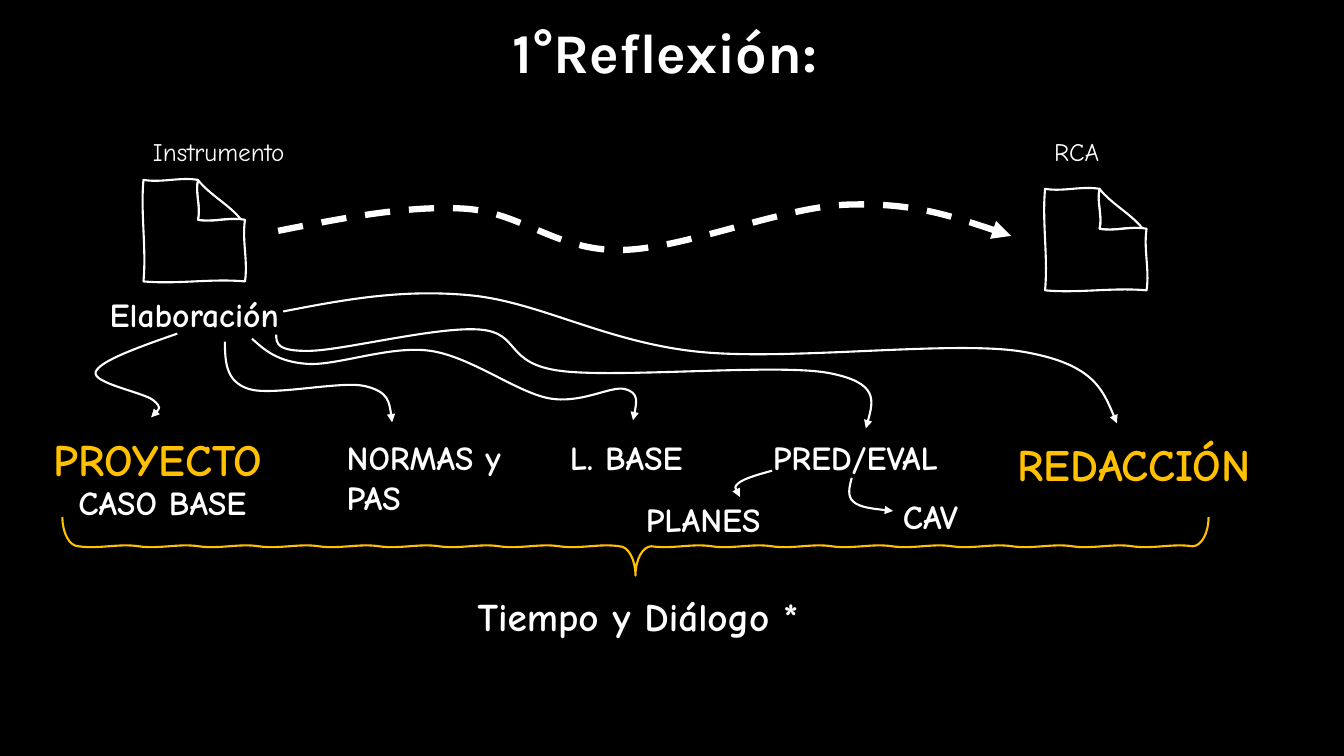
from dataclasses import dataclass
from itertools import pairwise
from typing import NamedTuple

from lxml import etree
from pptx import Presentation
from pptx import util as u
from pptx.dml.color import RGBColor
from pptx.enum import dml, text
from pptx.oxml.ns import qn


@dataclass(frozen=True)
class Theme:
    black: RGBColor = RGBColor(0x00, 0x00, 0x00)
    white: RGBColor = RGBColor(0xFF, 0xFF, 0xFF)
    gold: RGBColor = RGBColor(0xFF, 0xC0, 0x00)
    title_font: str = "Karla"
    body_font: str = "Comic Neue"
    title_size: float = 40
    key_size: float = 32
    closing_size: float = 28
    step_size: float = 24
    caption_size: float = 18
    thin: float = 1.5
    thick: float = 4.5


THEME = Theme()


class Point(NamedTuple):
    x: float
    y: float


class Curve(NamedTuple):
    """A Bézier piece: it leaves start toward leave and reaches end from arrive."""
    start: Point
    leave: Point
    arrive: Point
    end: Point


@dataclass(frozen=True)
class Label:
    words: str
    left: float
    top: float
    width: float
    height: float
    size: float = THEME.step_size
    color: RGBColor = THEME.white
    bold: bool = True
    font: str = THEME.body_font
    align: text.PP_ALIGN = text.PP_ALIGN.LEFT
    filled: bool = False


@dataclass(frozen=True)
class Arrow:
    knots: list[tuple[float, float]]
    weight: float = THEME.thin
    dashed: bool = False


STEP_TOP = 308.2
LABELS = [
    Label("1°Reflexión:", 0, 9, 950, 64, THEME.title_size, font=THEME.title_font,
          align=text.PP_ALIGN.CENTER),
    Label("Instrumento", 102.2, 93.6, 112, 29, THEME.caption_size, bold=False),
    Label("RCA", 745.9, 93.6, 54, 29, THEME.caption_size, bold=False),
    Label("Elaboración", 71.3, 206.6, 139, 36, filled=True),
    Label("PROYECTO", 31, 304.6, 187, 46, THEME.key_size, THEME.gold),
    Label("CASO BASE", 49, 340.6, 158, 36),
    Label("NORMAS y PAS", 240.5, STEP_TOP, 138.2, 65.5),
    Label("L. BASE", 400, STEP_TOP, 113, 36),
    Label("PRED/EVAL", 545, STEP_TOP, 153.4, 36),
    Label("PLANES", 454.3, 352.8, 110.2, 36),
    Label("CAV", 637.9, 350.6, 62, 36),
    Label("REDACCIÓN", 720, STEP_TOP, 201.6, 46, THEME.key_size, THEME.gold),
    Label("Tiempo y Diálogo *", 334.1, 419.8, 253.4, 41, THEME.closing_size, filled=True),
]

ARROWS = {
    "Instrumento a RCA": Arrow(
        [(198.7, 164.9), (331.2, 149), (442.8, 178.6), (604.8, 146.2), (722.2, 168.5)],
        THEME.thick, dashed=True),
    "Elaboración a PROYECTO": Arrow(
        [(126.7, 238.3), (68.4, 265.7), (109.4, 285.8), (108, 298.1)]),
    "Elaboración a NORMAS": Arrow(
        [(160.6, 244.1), (177.8, 277.9), (260.6, 275.8), (280.1, 301.7)]),
    "Elaboración a L. BASE": Arrow(
        [(180, 241.9), (219.6, 259.9), (307.4, 250.6), (391.7, 284.4), (446.4, 277.9),
         (452.2, 300.2)]),
    "Elaboración a PRED/EVAL": Arrow(
        [(197.3, 239), (221.8, 250.6), (342.7, 235.4), (401, 265), (591.8, 266.4),
         (618.5, 306)]),
    "Elaboración a REDACCIÓN": Arrow(
        [(202.3, 222.5), (336.2, 211), (499, 251.3), (730.8, 251.3), (797.8, 302.4)]),
    "PRED/EVAL a PLANES": Arrow([(551.5, 336.2), (527.8, 344.9), (528.5, 355)]),
    "PRED/EVAL a CAV": Arrow([(608.4, 341.3), (609.8, 358.6), (637.9, 365)]),
}

DOCUMENT_ORIGINS = [Point(102.5, 128.5), Point(746.5, 134.9)]
PAGE_SIDE, FOLD_X, FOLD_Y = 72.5, 38.9, 28.5
FOLD_CORNERS = [(FOLD_X, 0), (69.8, FOLD_Y), (FOLD_X, FOLD_Y)]
PAGE_CORNERS = [(0, 0), (FOLD_X, 0), (FOLD_X, FOLD_Y), (PAGE_SIDE, FOLD_Y),
                (PAGE_SIDE, PAGE_SIDE), (0, PAGE_SIDE)]

BRACE_LEFT, BRACE_RIGHT = 44.6, 863.3
BRACE_TOP, BRACE_BAR, BRACE_TIP = 369.4, 390.2, 411.1
BRACE_TURN = 11.5
BRACE_WAVES = 9


def between(a: Point, b: Point, share: float) -> Point:
    return Point(a.x + (b.x - a.x) * share, a.y + (b.y - a.y) * share)


def smooth(knots: list[Point]) -> list[Curve]:
    """Pass through all knots; each inner tangent runs parallel to its neighbours."""
    curves = []
    last = len(knots) - 2
    for i, (a, b) in enumerate(pairwise(knots)):
        before, after = knots[max(i - 1, 0)], knots[min(i + 2, last + 1)]
        leave = Point(a.x + (b.x - before.x) / 6, a.y + (b.y - before.y) / 6)
        arrive = Point(b.x - (after.x - a.x) / 6, b.y - (after.y - a.y) / 6)
        if i == 0:
            leave = between(a, arrive, 0.5)
        if i == last:
            arrive = between(leave, b, 0.5)
        curves.append(Curve(a, leave, arrive, b))
    return curves


def wobble(a: Point, b: Point, waves: int = 1, swing: float = 2.2) -> list[Curve]:
    """A hand-drawn edge from a to b that sways to both sides in each wave."""
    length = ((b.x - a.x) ** 2 + (b.y - a.y) ** 2) ** 0.5
    sway_x, sway_y = -(b.y - a.y) / length * swing, (b.x - a.x) / length * swing
    curves = []
    for wave in range(waves):
        start, first, second, end = (
            between(a, b, (wave + third / 3) / waves) for third in range(4))
        curves.append(Curve(start, Point(first.x + sway_x, first.y + sway_y),
                            Point(second.x - sway_x, second.y - sway_y), end))
    return curves


def quarter_turn(a: Point, b: Point, starts_upright: bool) -> Curve:
    corner = Point(a.x, b.y) if starts_upright else Point(b.x, a.y)
    return Curve(a, between(a, corner, 0.55), between(b, corner, 0.55), b)


def brace() -> list[Curve]:
    middle = (BRACE_LEFT + BRACE_RIGHT) / 2
    tip = Point(middle, BRACE_TIP)
    bar_start, notch_start, notch_end, bar_end = (
        Point(x, BRACE_BAR) for x in (BRACE_LEFT + BRACE_TURN, middle - BRACE_TURN,
                                      middle + BRACE_TURN, BRACE_RIGHT - BRACE_TURN))
    return [
        quarter_turn(Point(BRACE_LEFT, BRACE_TOP), bar_start, starts_upright=True),
        *wobble(bar_start, notch_start, BRACE_WAVES),
        quarter_turn(notch_start, tip, starts_upright=False),
        quarter_turn(tip, notch_end, starts_upright=True),
        *wobble(notch_end, bar_end, BRACE_WAVES),
        quarter_turn(bar_end, Point(BRACE_RIGHT, BRACE_TOP), starts_upright=False),
    ]


def draw_curves(shapes, curves: list[Curve], color: RGBColor = THEME.white,
                weight: float = THEME.thin, closed: bool = False):
    """Lay out the curve points as straight steps, then join each three into a Bézier."""
    builder = shapes.build_freeform(*map(u.Pt, curves[0].start))
    builder.add_line_segments(
        [tuple(map(u.Pt, point)) for curve in curves for point in curve[1:]], close=closed)
    outline = builder.convert_to_shape()
    steps = list(outline.element.iter(qn("a:lnTo")))
    for trio in zip(steps[::3], steps[1::3], steps[2::3]):
        bezier = etree.Element(qn("a:cubicBezTo"))
        trio[0].addprevious(bezier)
        for step in trio:
            bezier.append(step[0])
            step.getparent().remove(step)
    outline.shadow.inherit = False
    if closed:
        outline.fill.solid()
        outline.fill.fore_color.rgb = THEME.black
    else:
        outline.fill.background()
    outline.line.color.rgb = color
    outline.line.width = u.Pt(weight)
    return outline


def draw_arrow(shapes, arrow: Arrow) -> None:
    outline = draw_curves(shapes, smooth([Point(*knot) for knot in arrow.knots]),
                          weight=arrow.weight)
    if arrow.dashed:
        outline.line.dash_style = dml.MSO_LINE.DASH
    etree.SubElement(outline.element.spPr.find(qn("a:ln")), qn("a:tailEnd"), type="triangle")


def draw_document(shapes, origin: Point) -> None:
    document = shapes.add_group_shape()
    for corners in (FOLD_CORNERS, PAGE_CORNERS):
        placed = [Point(origin.x + x, origin.y + y) for x, y in corners]
        edges = [edge for a, b in pairwise(placed + placed[:1]) for edge in wobble(a, b)]
        draw_curves(document.shapes, edges, closed=True)


def draw_label(shapes, label: Label) -> None:
    box = shapes.add_textbox(*map(u.Pt, (label.left, label.top, label.width, label.height)))
    if label.filled:
        box.fill.solid()
        box.fill.fore_color.rgb = THEME.black
    box.text_frame.word_wrap = True
    paragraph = box.text_frame.paragraphs[0]
    paragraph.text = label.words
    paragraph.alignment = label.align
    font = paragraph.font
    font.name, font.size, font.bold = label.font, u.Pt(label.size), label.bold
    font.color.rgb = label.color


def main() -> None:
    deck = Presentation()
    deck.slide_width, deck.slide_height = u.Pt(960), u.Pt(540)
    slide = deck.slides.add_slide(deck.slide_layouts[6])
    slide.background.fill.solid()
    slide.background.fill.fore_color.rgb = THEME.black
    for label in LABELS:
        draw_label(slide.shapes, label)
    for origin in DOCUMENT_ORIGINS:
        draw_document(slide.shapes, origin)
    draw_curves(slide.shapes, brace(), THEME.gold)
    for arrow in ARROWS.values():
        draw_arrow(slide.shapes, arrow)
    deck.save("out.pptx")


if __name__ == "__main__":
    main()
